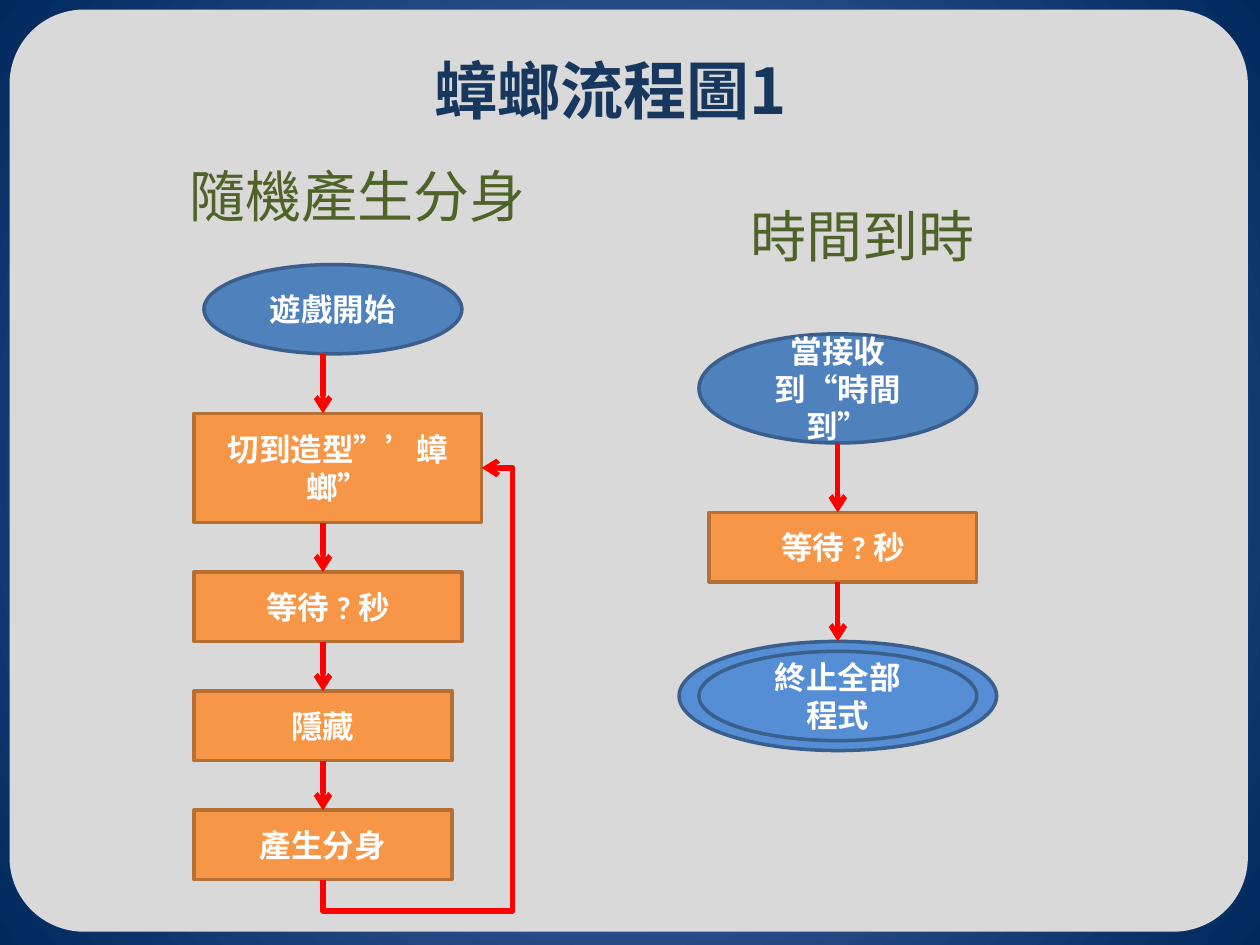
import collections
import pptx
import pptx.dml.color
import pptx.enum.dml
import pptx.enum.shapes
import pptx.enum.text
import pptx.oxml
import pptx.oxml.ns
import pptx.util

SHAPES = pptx.enum.shapes.MSO_SHAPE
CONNECTORS = pptx.enum.shapes.MSO_CONNECTOR
CELL = pptx.util.Mm(2)
CJK = "Noto Sans CJK JP"
NAVY, GREEN, WHITE, RED, GRAY = "17375E", "4F6228", "FFFFFF", "FF0000", "D9D9D9"
BLUE, SKY, BLUE_EDGE = "4F81BD", "558ED5", "3A5F8C"
ORANGE, ORANGE_EDGE = "F79646", "B76F34"

Box = collections.namedtuple("Box", "left top width height")
Step = collections.namedtuple("Step", "kind text before width height gap")


def color(value):
    return pptx.dml.color.RGBColor.from_string(value)


def inches(*lengths):
    return Box(*(pptx.util.Inches(length) for length in lengths))


def cells(left, top, width, height):
    return Box(left, top, width * CELL, height * CELL)


def add_element(parent, tag, **attributes):
    element = pptx.oxml.parse_xml(f"<{tag} {pptx.oxml.ns.nsdecls('a')}/>")
    for name, value in attributes.items():
        element.set(name, value)
    parent.append(element)
    return element


def write(frame, text, size=18, font="Calibri", fill=WHITE, bold=False):
    frame.word_wrap = True
    for index, line in enumerate(text.split("\n")):
        para = frame.add_paragraph() if index else frame.paragraphs[0]
        para.alignment = pptx.enum.text.PP_ALIGN.CENTER
        span = para.add_run()
        span.text = line
        span.font.size = pptx.util.Pt(size)
        span.font.name = font
        span.font.bold = bold
        span.font.color.rgb = color(fill)
        add_element(span.font._element, "a:ea", typeface=CJK)


def add_block(shapes, kind, box, fill, edge, text=None):
    shape = shapes.add_shape(kind, *box)
    shape.shadow.inherit = False
    shape.fill.solid()
    shape.fill.fore_color.rgb = color(fill)
    shape.line.color.rgb = color(edge)
    shape.line.width = pptx.util.Pt(2)
    if text:
        shape.text_frame.vertical_anchor = pptx.enum.text.MSO_ANCHOR.MIDDLE
        write(shape.text_frame, text, bold=True)
    return shape


def add_heading(page, box, text, **style):
    write(page.shapes.add_textbox(*box).text_frame, text, **style)


def add_arrow(page, kind, start, end):
    arrow = page.shapes.add_connector(kind, *start, *end)
    arrow.line.color.rgb = color(RED)
    arrow.line.width = pptx.util.Pt(3)
    add_element(arrow.line._get_or_add_ln(), "a:tailEnd", type="arrow")
    add_element(arrow._element.spPr, "a:effectLst")
    return arrow


def add_step(page, step, box):
    if step.kind == "process":
        return add_block(page.shapes, SHAPES.RECTANGLE, box, ORANGE, ORANGE_EDGE, step.text)
    if step.kind == "start":
        return add_block(page.shapes, SHAPES.OVAL, box, BLUE, BLUE_EDGE, step.text)
    group = page.shapes.add_group_shape()
    inner = cells(box.left + 2 * CELL, box.top + CELL, step.width - 4, step.height - 2)
    add_block(group.shapes, SHAPES.OVAL, box, SKY, BLUE_EDGE)
    add_block(group.shapes, SHAPES.OVAL, inner, SKY, BLUE_EDGE, step.text)
    return group


def add_flow(page, box, axis_column, steps):
    axis, top = box.left + axis_column * CELL, box.top
    blocks = []
    for step in steps:
        place = cells(axis - step.before * CELL, top, step.width, step.height)
        blocks.append(add_step(page, step, place))
        top += (step.height + step.gap) * CELL
    joinable = [step.kind == "process" and 2 * step.before == step.width for step in steps]
    for index, (above, below) in enumerate(zip(blocks, blocks[1:])):
        start = axis, above.top + above.height
        arrow = add_arrow(page, CONNECTORS.STRAIGHT, start, (axis, below.top))
        if joinable[index]:
            arrow.begin_connect(above, 2)
        if joinable[index + 1]:
            arrow.end_connect(below, 0)
    return blocks


def add_loop(page, box, last, target):
    start_x, start_y = last.left + last.width // 2, last.top + last.height
    end_x, end_y = target.left + target.width, target.top + target.height // 2
    run, rise = end_x - start_x, start_y - end_y
    center_x, center_y = (start_x + end_x) // 2, (start_y + end_y) // 2
    start = center_x + rise // 2, center_y + run // 2
    end = center_x - rise // 2, center_y - run // 2
    loop = add_arrow(page, CONNECTORS.ELBOW, start, end)
    loop._element.spPr.find(pptx.oxml.ns.qn("a:xfrm")).set("rot", "5400000")
    geometry = loop._element.spPr.find(pptx.oxml.ns.qn("a:prstGeom"))
    geometry.set("prst", "bentConnector4")
    guides = geometry.find(pptx.oxml.ns.qn("a:avLst"))
    if guides is None:
        guides = add_element(geometry, "a:avLst")
    shares = (start_y - box.top - box.height) / rise, (box.left + box.width - start_x) / run
    for number, share in enumerate(shares, 1):
        add_element(guides, "a:gd", name=f"adj{number}", fmla=f"val {round(share * 100000)}")


def add_backdrop(page, box):
    fill = page.background.fill
    fill.gradient()
    for stop, (position, value) in zip(fill.gradient_stops, ((0, "5E7CC5"), (1, "00295C"))):
        stop.position = position
        stop.color.rgb = color(value)
    gradient = page.background._cSld.find(".//" + pptx.oxml.ns.qn("a:gradFill"))
    gradient.remove(gradient.find(pptx.oxml.ns.qn("a:lin")))
    circle = add_element(gradient, "a:path", path="circle")
    add_element(circle, "a:fillToRect", l="50000", t="50000", r="50000", b="50000")
    panel = add_block(page.shapes, SHAPES.ROUNDED_RECTANGLE, box, GRAY, GRAY)
    panel.adjustments[0] = 0.079


def main():
    deck = pptx.Presentation()
    deck.slide_width, deck.slide_height = pptx.util.Inches(10), pptx.util.Inches(7.5)
    page = deck.slides.add_slide(deck.slide_layouts[6])
    add_backdrop(page, inches(0.09, 0.09, 9.8, 7.29))
    add_heading(page, inches(2.56, 0.36, 4.57, 0.71), "蟑螂流程圖1",
                size=36, font=CJK, fill=NAVY, bold=True)
    subtitle = dict(size=32, font=CJK, fill=GREEN)
    add_heading(page, inches(1.38, 1.23, 2.91, 0.64), "隨機產生分身", **subtitle)
    add_heading(page, inches(5.47, 1.55, 2.76, 0.64), "時間到時", **subtitle)

    clone_box = inches(1.54, 2.1, 2.53, 5.13)
    blocks = add_flow(page, clone_box, 13, [
        Step("start", "遊戲開始", 12, 26, 9, 6),
        Step("process", "切到造型”’蟑螂”", 13, 29, 11, 5),
        Step("process", "等待 ? 秒", 13, 27, 7, 5),
        Step("process", "隱藏", 13, 26, 7, 5),
        Step("process", "產生分身", 13, 26, 7, 0),
    ])
    add_loop(page, clone_box, blocks[-1], blocks[1])
    add_flow(page, inches(5.39, 2.65, 2.52, 3.31), 16, [
        Step("start", "當接收到“時間到”", 14, 28, 11, 7),
        Step("process", "等待 ? 秒", 13, 27, 7, 6),
        Step("end", "終止全部\n程式", 16, 32, 11, 0),
    ])
    deck.save("out.pptx")


if __name__ == "__main__":
    main()
